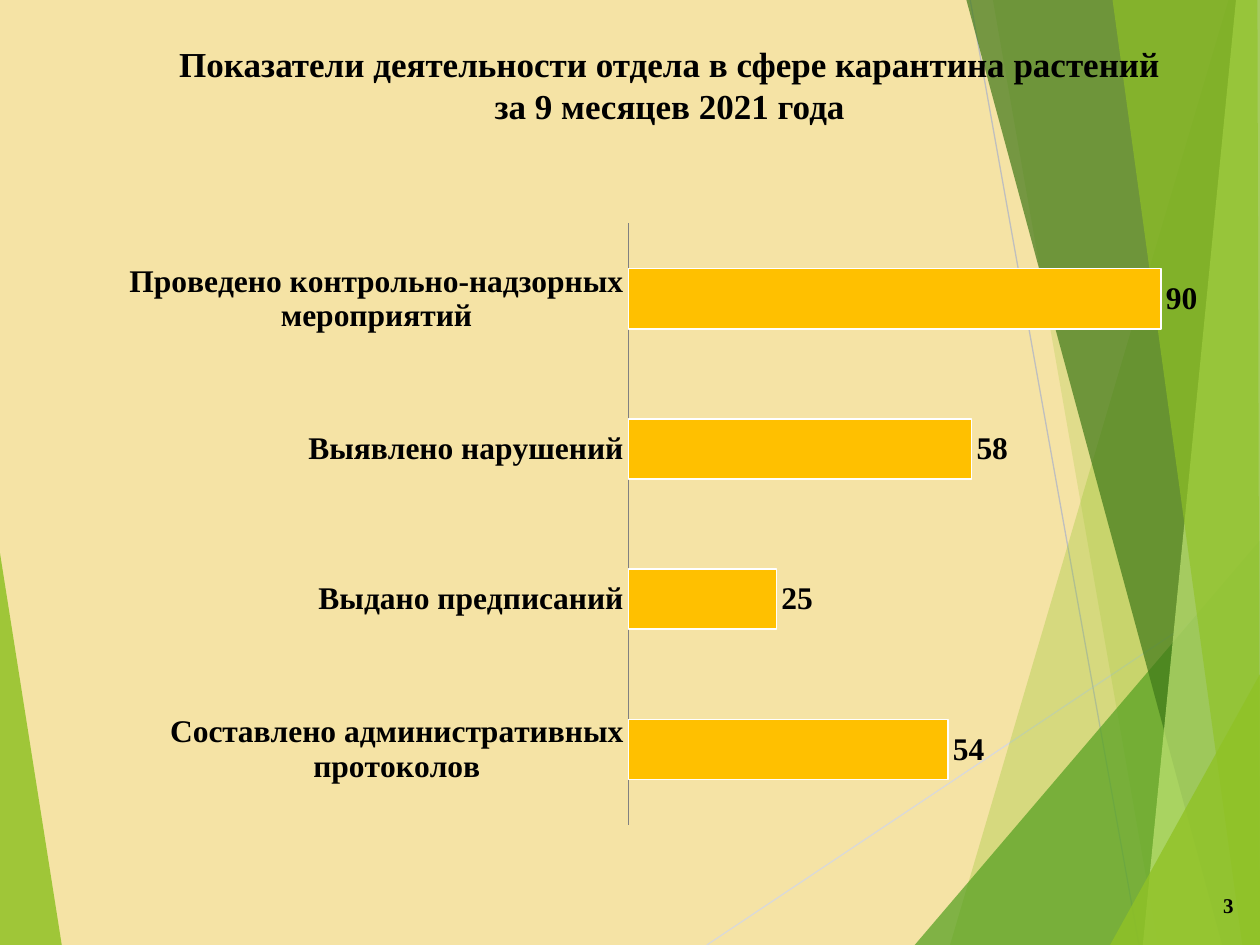
from lxml import etree
from pptx import Presentation
from pptx import util as u
from pptx.chart.data import CategoryChartData
from pptx.dml.color import RGBColor
from pptx.enum import chart as ch, shapes, text
from pptx.oxml import parse_xml
from pptx.oxml.ns import nsdecls, qn

PX = u.Inches(1) // 100
WIDE, HIGH = 1000, 750
FONT = "Times New Roman"

SAND = RGBColor(0xF5, 0xE3, 0xA5)
LIME = RGBColor(0x90, 0xC2, 0x26)
GREEN = RGBColor(0x54, 0xA0, 0x21)
DARK = RGBColor(0x3F, 0x78, 0x19)
PALE = RGBColor(0xC0, 0xE4, 0x74)
MIST = RGBColor(0xD9, 0xD9, 0xD9)
SILVER = RGBColor(0xBF, 0xBF, 0xBF)
GREY = RGBColor(0x80, 0x80, 0x80)
GOLD = RGBColor(0xFF, 0xC0, 0x00)
WHITE = RGBColor(0xFF, 0xFF, 0xFF)
BLACK = RGBColor(0, 0, 0)

# Each shard: colour, opacity in percent, corners
LEFT = (LIME, 85, [(0, 439), (49, 750), (0, 750)])
SHARDS = [
    (LIME, 30, [(975, 0), (754, 750), (1000, 750), (1000, 0)]),
    (LIME, 20, [(788, 0), (919, 750), (1000, 750), (1000, 0)]),
    (GREEN, 72, [(726, 750), (1000, 429), (1000, 750)]),
    (DARK, 70, [(767, 0), (970, 750), (1000, 750), (1000, 0)]),
    (PALE, 70, [(981, 0), (907, 750), (1000, 750), (1000, 0)]),
    (LIME, 65, [(883, 0), (986, 750), (1000, 750), (998, 0)]),
    (LIME, 80, [(881, 750), (1000, 535), (1000, 750)]),
]
RAYS = [(MIST, (561, 750, 1000, 457)), (SILVER, (770, 0, 904, 750))]

DATA = [
    ("Составлено административных протоколов", 54),
    ("Выдано предписаний", 25),
    ("Выявлено нарушений", 58),
    ("Проведено контрольно-надзорных мероприятий", 90),
]


def emu(box):
    return [n * PX for n in box]


def style(font, size):
    font.name, font.size, font.bold = FONT, u.Pt(size), True
    font.color.rgb = BLACK


def shard(slide, color, alpha, pts):
    form = slide.shapes.build_freeform(*pts[0], scale=PX)
    form.add_line_segments(pts[1:], close=True)
    shape = form.convert_to_shape()
    shape.shadow.inherit = False
    shape.line.fill.background()
    shape.fill.solid()
    shape.fill.fore_color.rgb = color
    tint = shape.fill._xPr.find(".//" + qn("a:srgbClr"))
    etree.SubElement(tint, qn("a:alpha"), val=str(alpha * 1000))


def ray(slide, color, ends):
    line = slide.shapes.add_connector(shapes.MSO_CONNECTOR.STRAIGHT, *emu(ends))
    line.line.color.rgb = color
    line.line.width = u.Pt(0.75)
    etree.SubElement(line._element.spPr, qn("a:effectLst"))


def decor(slide):
    """Draw the green shards and thin rays behind the content."""
    shard(slide, *LEFT)
    for item in RAYS:
        ray(slide, *item)
    for item in SHARDS:
        shard(slide, *item)


def label(slide, box, words, size, align, anchor):
    frame = slide.shapes.add_textbox(*emu(box)).text_frame
    frame.word_wrap = True
    frame.vertical_anchor = anchor
    par = frame.paragraphs[0]
    par.text = words
    par.alignment = align
    style(par.font, size)


def place(chart, x, y, w, h):
    """Fix the inner plot area, in fractions of the chart."""
    area = chart._chartSpace.chart.plotArea
    for old in area.findall(qn("c:layout")):
        area.remove(old)
    vals = "".join(f'<c:{k} val="{v}"/>' for k, v in
                   [("xMode", "edge"), ("yMode", "edge"),
                    ("x", x), ("y", y), ("w", w), ("h", h)])
    area.insert(0, parse_xml(
        f'<c:layout {nsdecls("c")}><c:manualLayout>'
        f'<c:layoutTarget val="inner"/>{vals}</c:manualLayout></c:layout>'))


def bars(slide, box):
    data = CategoryChartData()
    data.categories = [name for name, _ in DATA]
    data.add_series("Series 1", [val for _, val in DATA])
    chart = slide.shapes.add_chart(
        ch.XL_CHART_TYPE.BAR_CLUSTERED, *emu(box), data).chart
    chart.has_legend = chart.has_title = False
    style(chart.font, 18)
    place(chart, 0.504, 0.06, 0.486, 0.94)

    cat, val = chart.category_axis, chart.value_axis
    cat.major_tick_mark = ch.XL_TICK_MARK.NONE
    cat.format.line.color.rgb = GREY
    val.minimum_scale, val.maximum_scale = 0, 100
    val.has_major_gridlines = val.visible = False

    plot = chart.plots[0]
    plot.gap_width, plot.overlap = 150, -25
    plot.vary_by_categories = False
    plot.has_data_labels = True
    tags = plot.data_labels
    tags.show_value = True
    tags.position = ch.XL_LABEL_POSITION.OUTSIDE_END
    style(tags.font, 18)
    form = plot.series[0].format
    form.fill.solid()
    form.fill.fore_color.rgb = GOLD
    form.line.color.rgb = WHITE
    form.line.width = u.Pt(1)


def main():
    deck = Presentation()
    deck.slide_width, deck.slide_height = emu((WIDE, HIGH))
    slide = deck.slides.add_slide(deck.slide_layouts[6])
    slide.background.fill.solid()
    slide.background.fill.fore_color.rgb = SAND
    decor(slide)
    label(slide, (129, 29, 805, 147),
          "Показатели деятельности отдела в сфере карантина растений "
          "за 9 месяцев 2021 года",
          20, text.PP_ALIGN.CENTER, text.MSO_ANCHOR.TOP)
    label(slide, (933, 698, 56, 40), "3",
          12, text.PP_ALIGN.RIGHT, text.MSO_ANCHOR.MIDDLE)
    bars(slide, (12, 147, 966, 508))
    deck.save("out.pptx")


if __name__ == "__main__":
    main()
